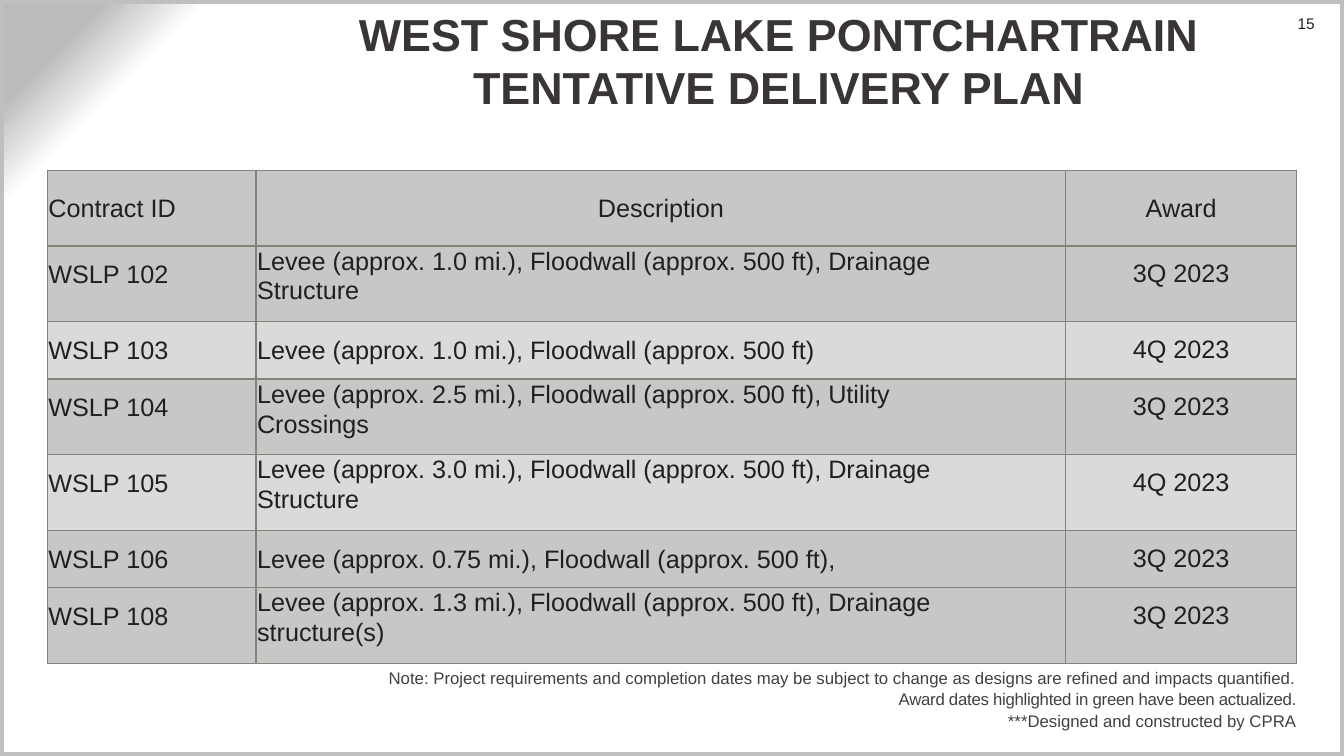
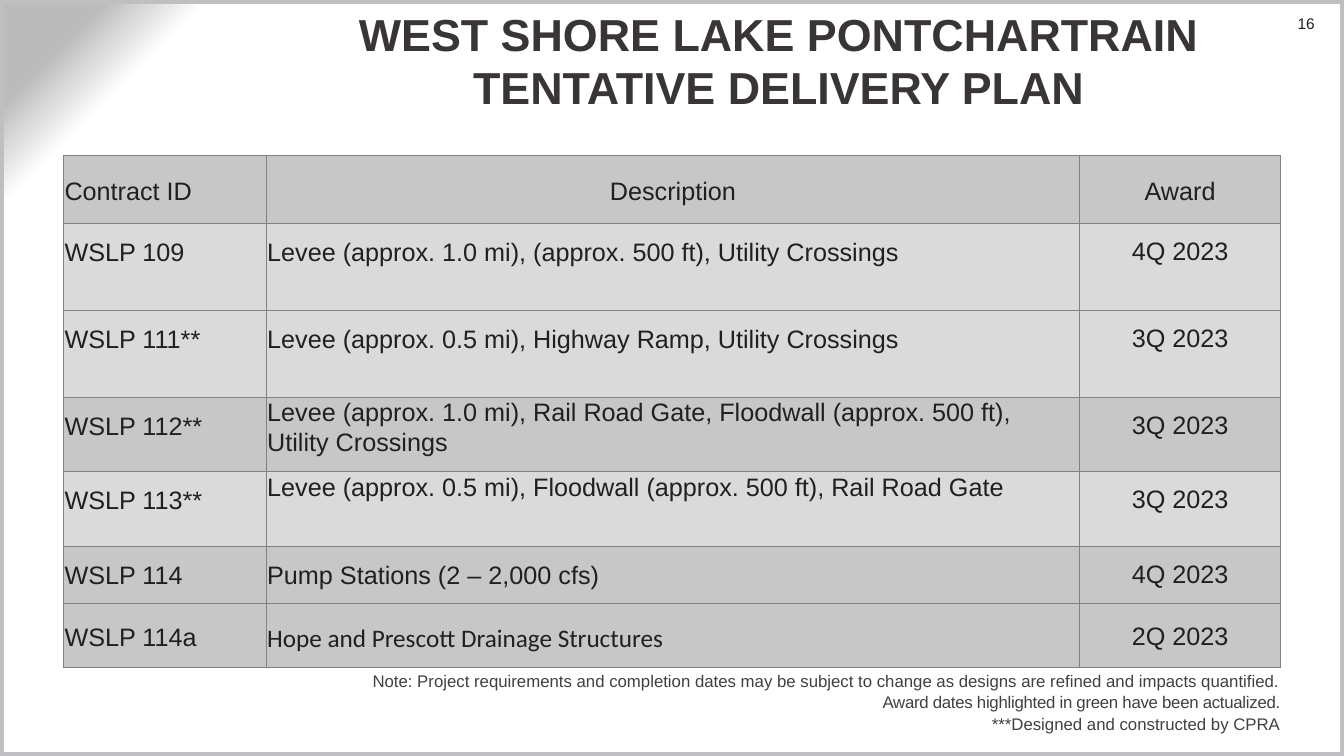
"""Build the two tentative delivery plan slides."""
from dataclasses import dataclass

from lxml import etree
from pptx import Presentation
from pptx.dml.color import RGBColor
from pptx.enum import shapes, text
from pptx.oxml import parse_xml
from pptx.oxml.ns import nsdecls, qn
from pptx.slide import Slide
from pptx.table import _Cell
from pptx.text.text import TextFrame, _Paragraph
from pptx.util import Inches, Pt

WIDTH, HEIGHT = 13.33, 7.5
INK = RGBColor(0x22, 0x1F, 0x20)
TITLE_INK = RGBColor(0x39, 0x34, 0x36)
NOTE_INK = RGBColor(0x40, 0x40, 0x40)
FRAME = RGBColor(0xBF, 0xBF, 0xC2)
RULE = RGBColor(0x83, 0x84, 0x79)
DARK = RGBColor(0xC7, 0xC7, 0xC7)
LIGHT = RGBColor(0xDA, 0xDA, 0xDA)

LEFT, CENTER, RIGHT = (text.PP_ALIGN.LEFT, text.PP_ALIGN.CENTER, text.PP_ALIGN.RIGHT)
TITLE = "WEST SHORE LAKE PONTCHARTRAIN TENTATIVE DELIVERY PLAN"
NOTES = (
    "Note: Project requirements and completion dates may be subject to change "
    "as designs are refined and impacts quantified.",
    "Award dates highlighted in green have been actualized.",
    "***Designed and constructed by CPRA",
)
HEADINGS = ("Contract ID", "Description", "Award")
BACKGROUND = f"""
<p:bg {nsdecls("p", "a")}><p:bgPr><a:gradFill rotWithShape="1"><a:gsLst>
<a:gs pos="85000"><a:srgbClr val="FFFFFF"/></a:gs>
<a:gs pos="90000"><a:srgbClr val="FFFFFF"><a:alpha val="35000"/></a:srgbClr></a:gs>
<a:gs pos="95000"><a:srgbClr val="BBBBBC"/></a:gs>
</a:gsLst><a:path path="circle"><a:fillToRect l="100000" t="100000"/></a:path>
</a:gradFill><a:effectLst/></p:bgPr></p:bg>"""


@dataclass(frozen=True)
class Contract:
    """One contract row; a raised description starts at the top of its cell."""
    number: str
    description: str
    award: str
    height: float
    shade: RGBColor
    raised: bool = False
    pad: float = 0.15
    font: str = "Arial"


@dataclass(frozen=True)
class Plan:
    """One slide: its number, table geometry and contracts."""
    page: int
    left: float
    top: float
    columns: tuple[float, float, float]
    header_height: float
    header_pad: float
    description_margin: float
    note_top: float
    contracts: tuple[Contract, ...]


PLANS = (
    Plan(15, 0.47, 1.69, (2.07, 8.03, 2.29), 0.75, 0.24, 1.0, 6.61, (
        Contract("102", "Levee (approx. 1.0 mi.), Floodwall (approx. 500 ft), Drainage Structure",
                 "3Q 2023", 0.75, DARK, True),
        Contract("103", "Levee (approx. 1.0 mi.), Floodwall (approx. 500 ft)",
                 "4Q 2023", 0.57, LIGHT),
        Contract("104", "Levee (approx. 2.5 mi.), Floodwall (approx. 500 ft), Utility Crossings",
                 "3Q 2023", 0.75, DARK, True),
        Contract("105", "Levee (approx. 3.0 mi.), Floodwall (approx. 500 ft), Drainage Structure",
                 "4Q 2023", 0.75, LIGHT, True),
        Contract("106", "Levee (approx. 0.75 mi.), Floodwall (approx. 500 ft),",
                 "3Q 2023", 0.57, DARK),
        Contract("108", "Levee (approx. 1.3 mi.), Floodwall (approx. 500 ft), Drainage structure(s)",
                 "3Q 2023", 0.75, DARK, True),
    )),
    Plan(16, 0.63, 1.54, (2.01, 8.07, 1.99), 0.68, 0.22, 0.4, 6.64, (
        Contract("109", "Levee (approx. 1.0 mi), (approx. 500 ft), Utility Crossings",
                 "4Q 2023", 0.86, LIGHT),
        Contract("111**", "Levee (approx. 0.5 mi), Highway Ramp, Utility Crossings",
                 "3Q 2023", 0.86, LIGHT),
        Contract("112**", "Levee (approx. 1.0 mi), Rail Road Gate, Floodwall (approx. 500 ft), "
                 "Utility Crossings", "3Q 2023", 0.74, DARK, True),
        Contract("113**", "Levee (approx. 0.5 mi), Floodwall (approx. 500 ft), Rail Road Gate",
                 "3Q 2023", 0.74, LIGHT, True),
        Contract("114", "Pump Stations (2 – 2,000 cfs)", "4Q 2023", 0.57, DARK),
        Contract("114a", "Hope and Prescott Drainage Structures",
                 "2Q 2023", 0.63, DARK, pad=0.2, font="Calibri"),
    )),
)


def style(paragraph: _Paragraph, size: float, color: RGBColor, align: text.PP_ALIGN,
          font: str = "Arial", bold: bool = False, tracking: int = 0) -> None:
    """Format a paragraph and its runs; tracking is in hundredths of a point."""
    paragraph.alignment = align
    for run in paragraph.runs:
        run.font.name, run.font.size, run.font.bold = font, Pt(size), bold
        run.font.color.rgb = color
        if tracking:
            run.font._element.set("spc", str(tracking))


def add_text(slide: Slide, words: str, left: float, top: float, width: float,
             height: float, inset_left: float = 0, inset_top: float = 0) -> TextFrame:
    """Add a wrapping text box and return its frame."""
    box = slide.shapes.add_textbox(Inches(left), Inches(top), Inches(width), Inches(height))
    frame = box.text_frame
    frame.word_wrap = True
    frame.margin_left, frame.margin_top = Inches(inset_left), Inches(inset_top)
    frame.margin_right = frame.margin_bottom = 0
    frame.text = words
    return frame


def fill_cell(cell: _Cell, words: str, shade: RGBColor, pad: float, align: text.PP_ALIGN,
              margin_right: float = 0, font: str = "Arial") -> None:
    """Write one ruled and shaded table cell."""
    cell.text = words
    cell.margin_left = Inches(0.01 if align == LEFT else 0)
    cell.margin_top, cell.margin_right, cell.margin_bottom = Inches(pad), Inches(margin_right), 0
    properties = cell._tc.get_or_add_tcPr()
    for side in ("a:lnL", "a:lnR", "a:lnT", "a:lnB"):
        line = etree.SubElement(properties, qn(side), w=str(Pt(1)))
        solid = etree.SubElement(line, qn("a:solidFill"))
        etree.SubElement(solid, qn("a:srgbClr"), val=str(RULE))
    cell.fill.solid()
    cell.fill.fore_color.rgb = shade
    style(cell.text_frame.paragraphs[0], 18, INK, align, font)


def add_schedule(slide: Slide, plan: Plan) -> None:
    """Draw the contract table."""
    heights = [plan.header_height, *(contract.height for contract in plan.contracts)]
    table = slide.shapes.add_table(
        len(heights), len(HEADINGS), Inches(plan.left), Inches(plan.top),
        Inches(sum(plan.columns)), Inches(sum(heights))).table
    table.first_row = table.horz_banding = False
    for column, width in zip(table.columns, plan.columns):
        column.width = Inches(width)
    for row, height in zip(table.rows, heights):
        row.height = Inches(height)
    for index, (heading, align) in enumerate(zip(HEADINGS, (LEFT, CENTER, CENTER))):
        fill_cell(table.cell(0, index), heading, DARK, plan.header_pad, align)
    for index, contract in enumerate(plan.contracts, start=1):
        number, description, award = (table.cell(index, column) for column in range(3))
        fill_cell(number, f"WSLP {contract.number}", contract.shade, contract.pad, LEFT)
        fill_cell(description, contract.description, contract.shade,
                  0 if contract.raised else contract.pad, LEFT,
                  plan.description_margin, contract.font)
        if contract.raised:
            description.text_frame.paragraphs[0].line_spacing = Pt(21.2)
        fill_cell(award, contract.award, contract.shade, contract.pad - 0.01, CENTER)


def add_furniture(slide: Slide, page: int) -> None:
    """Draw the background, page number, frame and title."""
    slide.element.cSld.insert(0, parse_xml(BACKGROUND))
    number = add_text(slide, str(page), 12.44, 0.14, 0.6, 0.19, inset_left=0.1)
    style(number.paragraphs[0], 11, INK, RIGHT)
    frame = slide.shapes.add_shape(shapes.MSO_SHAPE.RECTANGLE, 0, 0, Inches(WIDTH), Inches(HEIGHT))
    frame.shadow.inherit = False
    frame.fill.background()
    frame.line.color.rgb = FRAME
    frame.line.width = Pt(6)
    title = add_text(slide, TITLE, 2.36, 0.14, 10.68, 0.91, inset_left=0.05)
    title.vertical_anchor = text.MSO_ANCHOR.MIDDLE
    style(title.paragraphs[0], 32, TITLE_INK, CENTER, bold=True)


def add_notes(slide: Slide, plan: Plan) -> None:
    """Write the notes, flush with the right edge of the table."""
    width = 9.46
    left = plan.left + sum(plan.columns) - width
    notes = add_text(slide, "\n".join(NOTES), left, plan.note_top, width, 0.62, inset_top=0.01)
    for index, paragraph in enumerate(notes.paragraphs):
        style(paragraph, 12, NOTE_INK, RIGHT, tracking=-20 if index == 1 else 0)
        if index:
            paragraph.space_before = Pt(1)


def main() -> None:
    """Build and save the presentation."""
    deck = Presentation()
    deck.slide_width, deck.slide_height = Inches(WIDTH), Inches(HEIGHT)
    for plan in PLANS:
        slide = deck.slides.add_slide(deck.slide_layouts[6])
        add_furniture(slide, plan.page)
        add_schedule(slide, plan)
        add_notes(slide, plan)
    deck.save("out.pptx")


if __name__ == "__main__":
    main()
